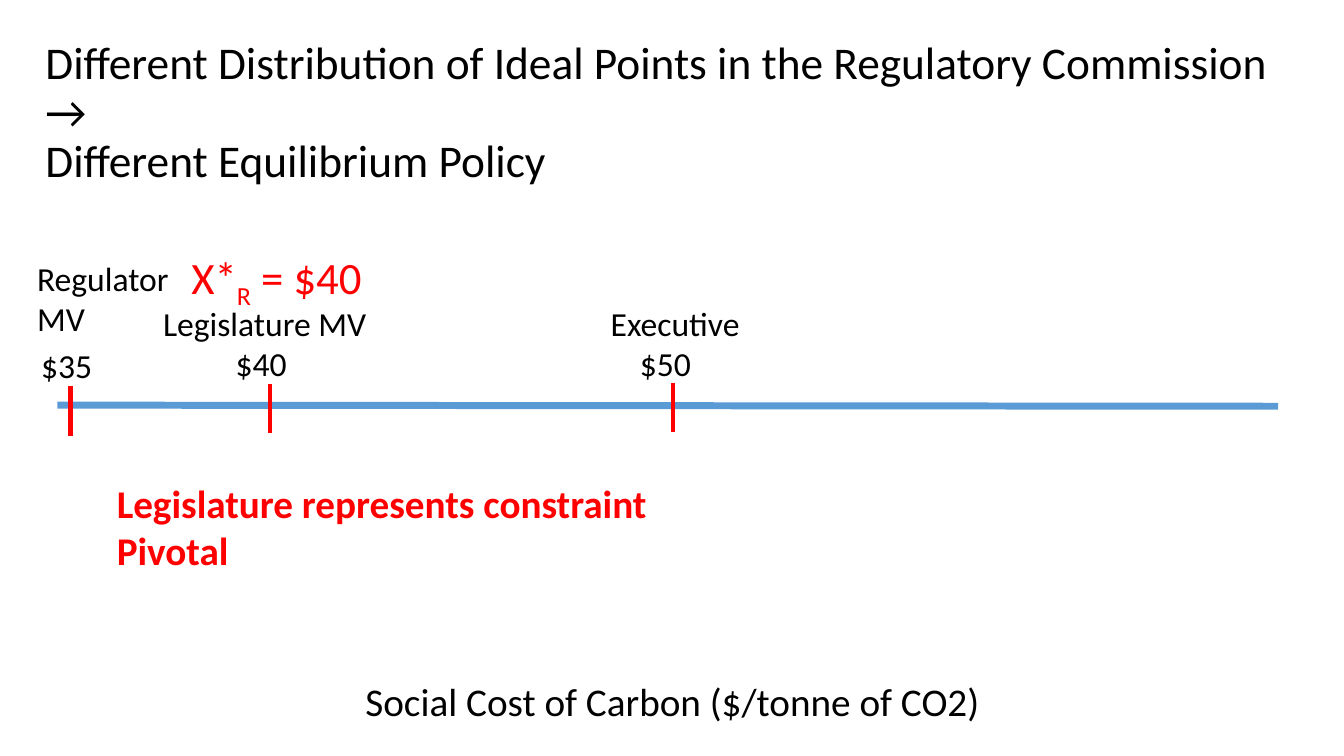
from lxml import etree
from pptx import Presentation
from pptx import util as u
from pptx.dml.color import RGBColor
from pptx.enum import shapes, text
from pptx.oxml import ns

BLACK, RED, BLUE = "000000", "FF0000", "5B9BD5"


def colour(value):
    return RGBColor.from_string(value)


class PolicySlide:
    font = "Calibri"

    def __init__(self, presentation):
        self.slide = presentation.slides.add_slide(presentation.slide_layouts[5])

    def format_runs(self, paragraph, size, ink, bold=False):
        values = {"name": self.font, "size": u.Pt(size), "bold": bold}
        for run in paragraph.runs:
            for name, value in values.items():
                setattr(run.font, name, value)
            run.font.color.rgb = colour(ink)

    def title(self, words, left, top, width, height, size):
        shape = self.slide.shapes.title
        box = {"left": left, "top": top, "width": width, "height": height}
        for name, value in box.items():
            setattr(shape, name, u.Pt(value))
        frame = shape.text_frame
        frame.word_wrap = True
        frame.auto_size = text.MSO_AUTO_SIZE.NONE
        frame.vertical_anchor = text.MSO_ANCHOR.MIDDLE
        paragraph = frame.paragraphs[0]
        paragraph.text = words
        paragraph.alignment = text.PP_ALIGN.LEFT
        paragraph.line_spacing = 0.9
        paragraph.space_before = u.Pt(0)
        self.format_runs(paragraph, size, BLACK)

    def label(self, lines, left, top, width, height, size=24, ink=BLACK,
              bold=False, align=text.PP_ALIGN.LEFT):
        """Add a text box; each line is a list of (words, baseline percent) runs or a string."""
        shape = self.slide.shapes.add_textbox(*map(u.Pt, (left, top, width, height)))
        frame = shape.text_frame
        frame.word_wrap = True
        for index, line in enumerate(lines):
            paragraph = frame.add_paragraph() if index else frame.paragraphs[0]
            paragraph.alignment = align
            for words, baseline in [(line, 0)] if isinstance(line, str) else line:
                run = paragraph.add_run()
                run.text = words
                if baseline:
                    run.font._element.set("baseline", str(baseline * 1000))
            self.format_runs(paragraph, size, ink, bold)

    def line(self, start, end, ink, weight):
        connector = self.slide.shapes.add_connector(
            shapes.MSO_CONNECTOR.STRAIGHT, *map(u.Pt, (*start, *end)))
        connector.line.color.rgb = colour(ink)
        connector.line.width = u.Pt(weight)
        etree.SubElement(connector._element.spPr, ns.qn("a:effectLst"))

    def tick(self, x, top):
        self.line((x, top), (x, top + 35.3), RED, 3)


def main():
    presentation = Presentation()
    presentation.slide_width, presentation.slide_height = u.Pt(960), u.Pt(540)
    page = PolicySlide(presentation)

    page.title("Different Distribution of Ideal Points in the Regulatory Commission → \v"
               "Different Equilibrium Policy", 25.2, 28.8, 907.9, 104.4, 32.4)

    page.line((41, 289.4), (913, 290.2), BLUE, 5)
    for x, top in ((193, 274.3), (481, 273.6), (50.4, 275.8)):
        page.tick(x, top)

    for lines, left, top, width, height in (
            (["Executive"], 429.1, 213.1, 108.7, 36),
            (["Regulator", "MV"], 19.4, 180.7, 151.9, 65.5),
            (["Legislature MV"], 109.4, 213.1, 164.2, 36),
            (["$40"], 161.3, 241.2, 60.5, 36),
            (["$50"], 450, 241.2, 59, 36),
            (["$35"], 22.3, 242.6, 54, 36)):
        page.label(lines, left, top, width, height)

    page.label([[("X*", 0), ("R", -25), (" = $40", 0)]], 129.6, 175, 144, 46, 32, RED)
    page.label(["Legislature represents constraint", "Pivotal"],
               76.3, 339.1, 461.5, 74.9, 28, RED, bold=True)
    page.label(["Social Cost of Carbon ($/tonne of CO2)"],
               120.2, 480.2, 720, 41, 28, align=text.PP_ALIGN.CENTER)

    presentation.save("out.pptx")


if __name__ == "__main__":
    main()
